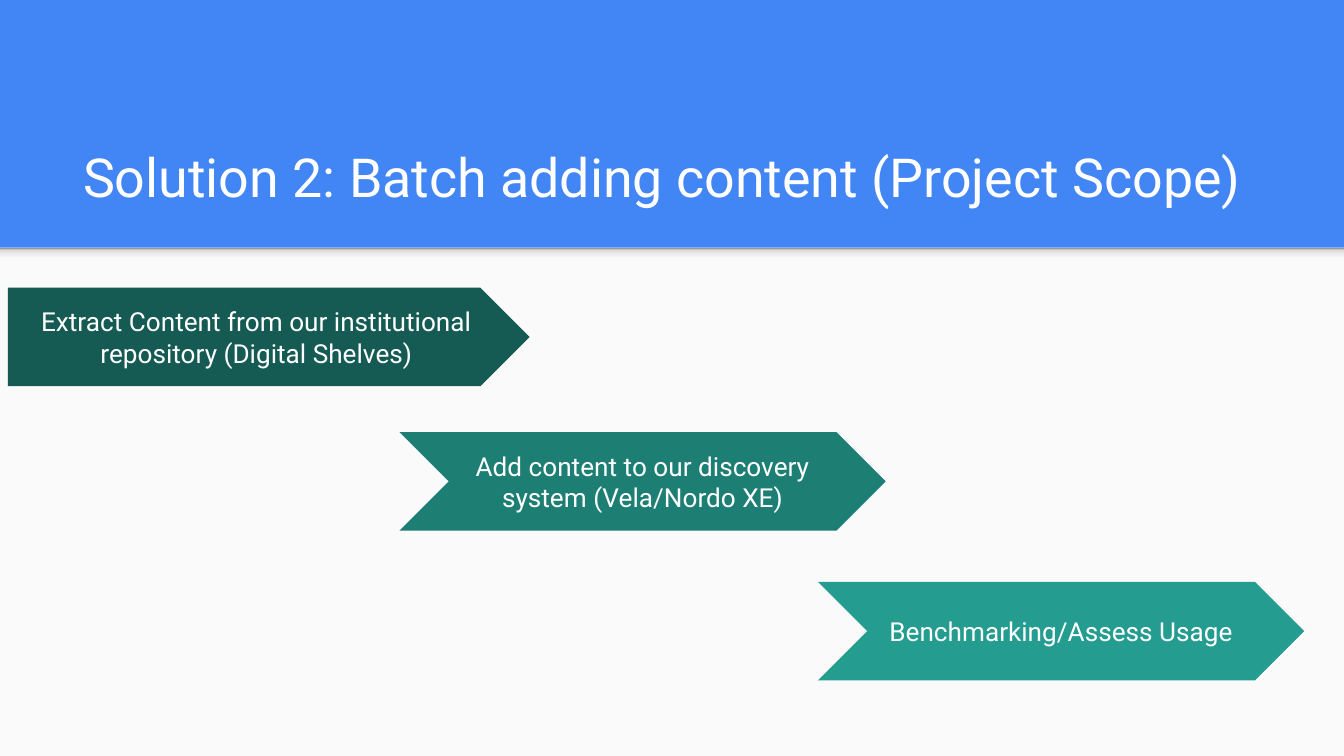
from copy import deepcopy
from pptx import Presentation
from pptx.dml.color import RGBColor
from pptx.enum.shapes import MSO_SHAPE
from pptx.enum.text import MSO_ANCHOR, PP_ALIGN
from pptx.oxml.ns import qn
from pptx.util import Cm, Pt

RECT, PLATE, CHEVRON = MSO_SHAPE.RECTANGLE, MSO_SHAPE.PENTAGON, MSO_SHAPE.CHEVRON
LEFT, CENTER = PP_ALIGN.LEFT, PP_ALIGN.CENTER
MIDDLE, BOTTOM = MSO_ANCHOR.MIDDLE, MSO_ANCHOR.BOTTOM

theme = {
    "font": "Roboto", "title": 28.8, "step": 14,
    "band": "4285F4", "page": "FAFAFA", "text": "FFFFFF",
    "fade": [(0, "F9F9F9"), (0.36, "F9F9F9"), (0.8, "DEDEDE"), (1, "999999")],
    "steps": ["155B54", "1D7E74", "249C90"],
}


def add_shape(kind, box, color):
    shape = slide.shapes.add_shape(kind, *map(Cm, box))
    shape.shadow.inherit = False
    shape.line.fill.background()
    shape.fill.solid()
    shape.fill.fore_color.rgb = RGBColor.from_string(color)
    return shape


def set_text(shape, text, size, align, anchor):
    frame = shape.text_frame
    inset = Cm(0.25)
    form = {"word_wrap": True, "vertical_anchor": anchor,
            "margin_left": inset, "margin_right": inset,
            "margin_top": inset, "margin_bottom": inset}
    for name, value in form.items():
        setattr(frame, name, value)
    para = frame.paragraphs[0]
    para.alignment = align
    run = para.add_run()
    run.text = text
    for name, value in {"name": theme["font"], "size": Pt(size)}.items():
        setattr(run.font, name, value)
    run.font.color.rgb = RGBColor.from_string(theme["text"])


deck = Presentation()
deck.slide_width, deck.slide_height = Cm(25.4), Cm(14.29)
slide = deck.slides.add_slide(deck.slide_layouts[6])
back = slide.background.fill
back.solid()
back.fore_color.rgb = RGBColor.from_string(theme["band"])

add_shape(RECT, (0, 4.68, 25.4, 9.61), theme["page"])

fade = add_shape(RECT, (0, 4.68, 25.4, 0.3), theme["page"])
fade.fill.gradient()
fade.fill.gradient_angle = 90
stops = fade._element.spPr.find(".//" + qn("a:gsLst"))
while len(stops) < len(theme["fade"]):
    stops.append(deepcopy(stops[0]))
for stop, (place, color) in zip(fade.fill.gradient_stops, theme["fade"]):
    stop.position = place
    stop.color.rgb = RGBColor.from_string(color)

title = slide.shapes.add_textbox(Cm(1.32), Cm(2.06), Cm(22.83), Cm(2.13))
set_text(title, "Solution 2: Batch adding content (Project Scope)",
         theme["title"], LEFT, BOTTOM)

steps = [
    (PLATE, 0.15, 5.44, 9.86,
     "Extract Content from our institutional repository (Digital Shelves)"),
    (CHEVRON, 7.55, 8.17, 9.19,
     "Add content to our discovery system (Vela/Nordo XE)"),
    (CHEVRON, 15.46, 11, 9.19, "Benchmarking/Assess Usage"),
]
for (kind, left, top, width, text), color in zip(steps, theme["steps"]):
    arrow = add_shape(kind, (left, top, width, 1.86), color)
    arrow.adjustments[0] = 0.5
    set_text(arrow, text, theme["step"], CENTER, MIDDLE)

deck.save("out.pptx")
